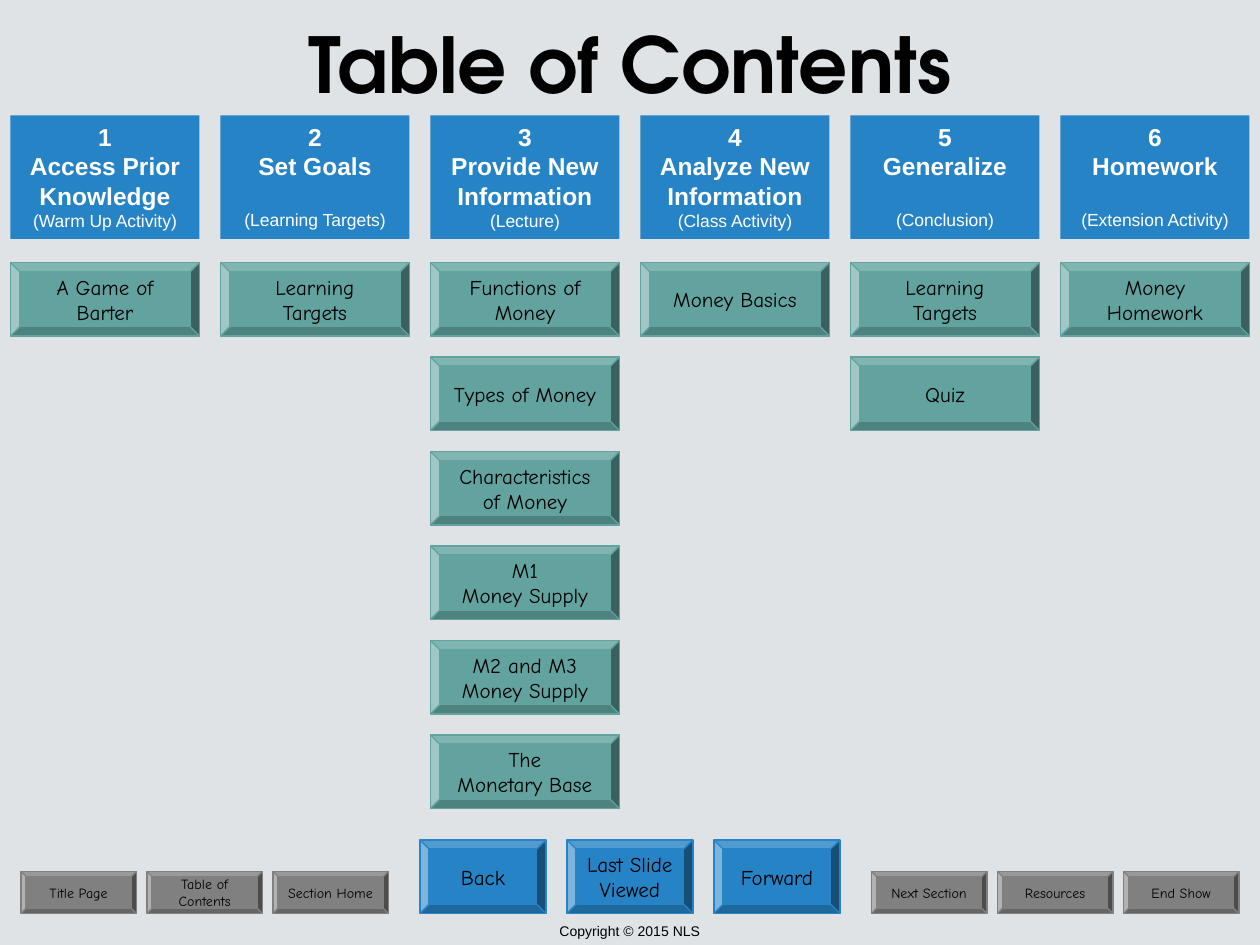
from pptx import Presentation
from pptx.dml.color import RGBColor
from pptx.enum.shapes import MSO_SHAPE
from pptx.enum.text import MSO_ANCHOR, PP_ALIGN
from pptx.util import Pt

BEVEL, RECT = MSO_SHAPE.BEVEL, MSO_SHAPE.RECTANGLE
TOP, MIDDLE = MSO_ANCHOR.TOP, MSO_ANCHOR.MIDDLE
CENTER = PP_ALIGN.CENTER
BLUE, GRAY, TEAL = "2683C6", "808080", "62A39F"


def rgb(value):
    return RGBColor.from_string(value)


def add_block(box, lines, formats, kind=None, fill=None, anchor=MIDDLE, wrap=True):
    box = [Pt(v) for v in box]
    if kind is None:
        sp = s.shapes.add_textbox(*box)
    else:
        sp = s.shapes.add_shape(kind, *box)
        sp.shadow.inherit = False
        sp.fill.solid()
        sp.fill.fore_color.rgb = rgb(fill)
        if kind == BEVEL:
            sp.line.color.rgb = rgb(fill)
            sp.line.width = Pt(0.75)
        else:
            sp.line.fill.background()
    tf = sp.text_frame
    tf.word_wrap = wrap
    tf.vertical_anchor = anchor
    for i, (line, fmt) in enumerate(zip(lines, formats)):
        p = tf.paragraphs[0] if i == 0 else tf.add_paragraph()
        p.alignment = CENTER
        r = p.add_run()
        r.text = line
        r.font.color.rgb = rgb(fmt["color"])
        for name in ("name", "size", "bold"):
            setattr(r.font, name, fmt[name])
    return tf


title_fmt = {"name": "TeX Gyre Adventor", "size": Pt(44), "bold": True, "color": "000000"}
head_fmt = {"name": "Arial", "size": Pt(14), "bold": True, "color": "FFFFFF"}
note_fmt = {"name": "Arial", "size": Pt(10), "bold": False, "color": "FFFFFF"}
footer_fmt = {"name": "Arial", "size": Pt(8), "bold": False, "color": "000000"}
button_fmt = {"name": "Comic Neue", "size": Pt(12), "bold": False, "color": "000000"}
small_fmt = {**button_fmt, "size": Pt(8)}

columns = [
    (["Access Prior Knowledge"], "(Warm Up Activity)", ["A Game of\nBarter"]),
    (["Set Goals"], "(Learning Targets)", ["Learning\nTargets"]),
    (["Provide New", "Information"], "(Lecture)",
     ["Functions of\nMoney", "Types of Money", "Characteristics\nof Money",
      "M1\nMoney Supply", "M2 and M3\nMoney Supply", "The\nMonetary Base"]),
    (["Analyze New", "Information"], "(Class Activity)", ["Money Basics"]),
    (["Generalize"], "(Conclusion)", ["Learning\nTargets", "Quiz"]),
    (["Homework"], "(Extension Activity)", ["Money\nHomework"]),
]
one_line_heads = ("Set Goals", "Generalize", "Homework")

nav_groups = [
    (12, 498, 72, 66, 24, GRAY, small_fmt, ["Title Page", "Table of\nContents", "Section Home"]),
    (240, 480, 84, 72, 42, BLUE, button_fmt, ["Back", "Last Slide\nViewed", "Forward"]),
    (498, 498, 72, 66, 24, GRAY, small_fmt, ["Next Section", "Resources", "End Show"]),
]

prs = Presentation()
prs.slide_width, prs.slide_height = Pt(720), Pt(540)
s = prs.slides.add_slide(prs.slide_layouts[6])
s.background.fill.solid()
s.background.fill.fore_color.rgb = rgb("DFE3E5")

add_block((0, 523.44, 720, 16.56), ["Copyright © 2015 NLS"], [footer_fmt], anchor=TOP)
add_block((0, 0, 720, 72), ["Table of Contents"], [title_fmt])

for left, top, pitch, width, height, fill, fmt, labels in nav_groups:
    for i, label in enumerate(labels):
        lines = label.split("\n")
        add_block((left + i * pitch, top, width, height), lines, [fmt] * len(lines),
                  BEVEL, fill, wrap=False)

for col, (heads, note, topics) in enumerate(columns):
    left = 6 + col * 120
    lines = [str(col + 1), *heads, note]
    formats = [head_fmt] * (len(lines) - 1) + [note_fmt]
    tf = add_block((left, 66, 108, 70.5), lines, formats, RECT, BLUE, anchor=TOP)
    if heads[0] in one_line_heads:
        tf.paragraphs[-1].space_before = Pt(16.5)
    for row, topic in enumerate(topics):
        lines = topic.split("\n")
        add_block((left, 150 + row * 54, 108, 42), lines, [button_fmt] * len(lines),
                  BEVEL, TEAL, wrap=False)

prs.save("out.pptx")
